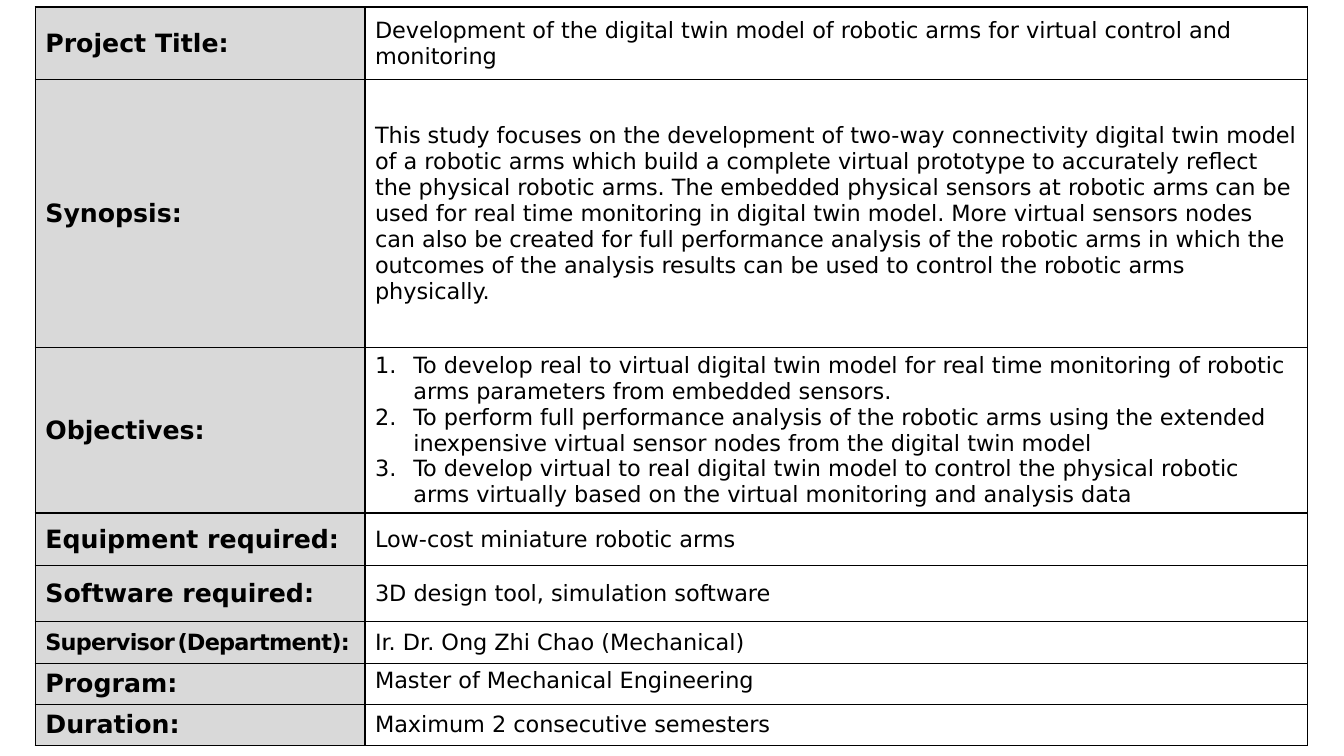
"""Build a one-slide project summary table."""
from dataclasses import dataclass

from lxml import etree
from pptx import Presentation
from pptx.dml.color import RGBColor
from pptx.enum.text import MSO_ANCHOR
from pptx.oxml.ns import qn
from pptx.util import Inches, Pt

MIDDLE, TOP = MSO_ANCHOR.MIDDLE, MSO_ANCHOR.TOP


@dataclass(frozen=True)
class Theme:
    """Colours, typeface and sizes of the slide."""
    font: str = "DejaVu Sans"
    ink: str = "000000"
    label_fill: str = "D9D9D9"
    label_size: int = 18
    body_size: int = 16
    gap_size: int = 5
    border: int = 1
    tightening: float = -0.5


THEME = Theme()
GRID = Inches(0.01)
SLIDE_COLUMNS, SLIDE_ROWS = 1333, 750
TABLE_LEFT, TABLE_TOP = 35, 7
TABLE_COLUMNS = (327, 935)
NUMBER_INDENT = 38

SUPERVISOR = (("Supervisor", THEME.body_size), (" ", THEME.gap_size),
              ("(Department):", THEME.body_size))
OBJECTIVES = (
    "To develop real to virtual digital twin model for real time monitoring of robotic "
    "arms parameters from embedded sensors.",
    "To perform full performance analysis of the robotic arms using the extended "
    "inexpensive virtual sensor nodes from the digital twin model",
    "To develop virtual to real digital twin model to control the physical robotic "
    "arms virtually based on the virtual monitoring and analysis data",
)
SYNOPSIS = (
    "This study focuses on the development of two-way connectivity digital twin model "
    "of a robotic arms which build a complete virtual prototype to accurately reflect "
    "the physical robotic arms. The embedded physical sensors at robotic arms can be "
    "used for real time monitoring in digital twin model. More virtual sensors nodes "
    "can also be created for full performance analysis of the robotic arms in which the "
    "outcomes of the analysis results can be used to control the robotic arms physically."
)
PROJECT_ROWS = (
    (72, "Project Title:", ("Development of the digital twin model of robotic arms "
                            "for virtual control and monitoring",), MIDDLE),
    (266, "Synopsis:", (SYNOPSIS,), MIDDLE),
    (164, "Objectives:", OBJECTIVES, MIDDLE),
    (52, "Equipment required:", ("Low-cost miniature robotic arms",), MIDDLE),
    (56, "Software required:", ("3D design tool, simulation software",), MIDDLE),
    (41, SUPERVISOR, ("Ir. Dr. Ong Zhi Chao (Mechanical)",), MIDDLE),
    (41, "Program:", ("Master of Mechanical Engineering",), TOP),
    (41, "Duration:", ("Maximum 2 consecutive semesters",), MIDDLE),
)


def style_font(font, size, bold):
    """Apply the theme's typeface and ink with a size and weight."""
    font.name, font.size, font.bold = THEME.font, Pt(size), bold
    font.color.rgb = RGBColor.from_string(THEME.ink)


def add_borders(cell):
    """Draw a thin line on all four sides of a cell."""
    properties = cell._tc.get_or_add_tcPr()
    for side in ("lnL", "lnR", "lnT", "lnB"):
        line = etree.SubElement(properties, qn(f"a:{side}"), w=str(Pt(THEME.border)))
        fill = etree.SubElement(line, qn("a:solidFill"))
        etree.SubElement(fill, qn("a:srgbClr"), val=THEME.ink)


def number_paragraph(paragraph):
    """Give a paragraph an automatic number and a hanging indent."""
    properties = paragraph._p.get_or_add_pPr()
    indent = NUMBER_INDENT * GRID
    properties.set("marL", str(indent))
    properties.set("indent", str(-indent))
    etree.SubElement(properties, qn("a:buFont"), typeface="+mj-lt")
    etree.SubElement(properties, qn("a:buAutoNum"), type="arabicPeriod")


def write_label(cell, label):
    """Write a bold label, either plain or as tightened sized runs."""
    cell.fill.solid()
    cell.fill.fore_color.rgb = RGBColor.from_string(THEME.label_fill)
    cell.vertical_anchor = MIDDLE
    paragraph = cell.text_frame.paragraphs[0]
    if isinstance(label, str):
        paragraph.text = label
        style_font(paragraph.font, THEME.label_size, True)
        return
    cell.margin_right = 0
    for text, size in label:
        run = paragraph.add_run()
        run.text = text
        style_font(run.font, size, True)
        run._r.get_or_add_rPr().set("spc", str(int(THEME.tightening * 100)))


def write_body(cell, texts, anchor):
    """Write the body paragraphs, numbered when there are several."""
    cell.fill.background()
    cell.vertical_anchor = anchor
    frame = cell.text_frame
    for index, text in enumerate(texts):
        paragraph = frame.add_paragraph() if index else frame.paragraphs[0]
        paragraph.text = text
        if len(texts) > 1:
            number_paragraph(paragraph)
        style_font(paragraph.font, THEME.body_size, False)


def add_project_table(slide):
    """Add the table of labels and project details."""
    height = sum(row[0] for row in PROJECT_ROWS)
    table = slide.shapes.add_table(
        len(PROJECT_ROWS), len(TABLE_COLUMNS), TABLE_LEFT * GRID, TABLE_TOP * GRID,
        sum(TABLE_COLUMNS) * GRID, height * GRID).table
    table.first_row = table.horz_banding = False
    for column, width in zip(table.columns, TABLE_COLUMNS):
        column.width = width * GRID
    for row, (row_height, label, texts, anchor) in zip(table.rows, PROJECT_ROWS):
        row.height = row_height * GRID
        label_cell, body_cell = row.cells
        for cell in (label_cell, body_cell):
            add_borders(cell)
        write_label(label_cell, label)
        write_body(body_cell, texts, anchor)


def main():
    """Create and save the presentation."""
    presentation = Presentation()
    presentation.slide_width = SLIDE_COLUMNS * GRID
    presentation.slide_height = SLIDE_ROWS * GRID
    slide = presentation.slides.add_slide(presentation.slide_layouts[6])
    add_project_table(slide)
    presentation.save("out.pptx")


if __name__ == "__main__":
    main()
